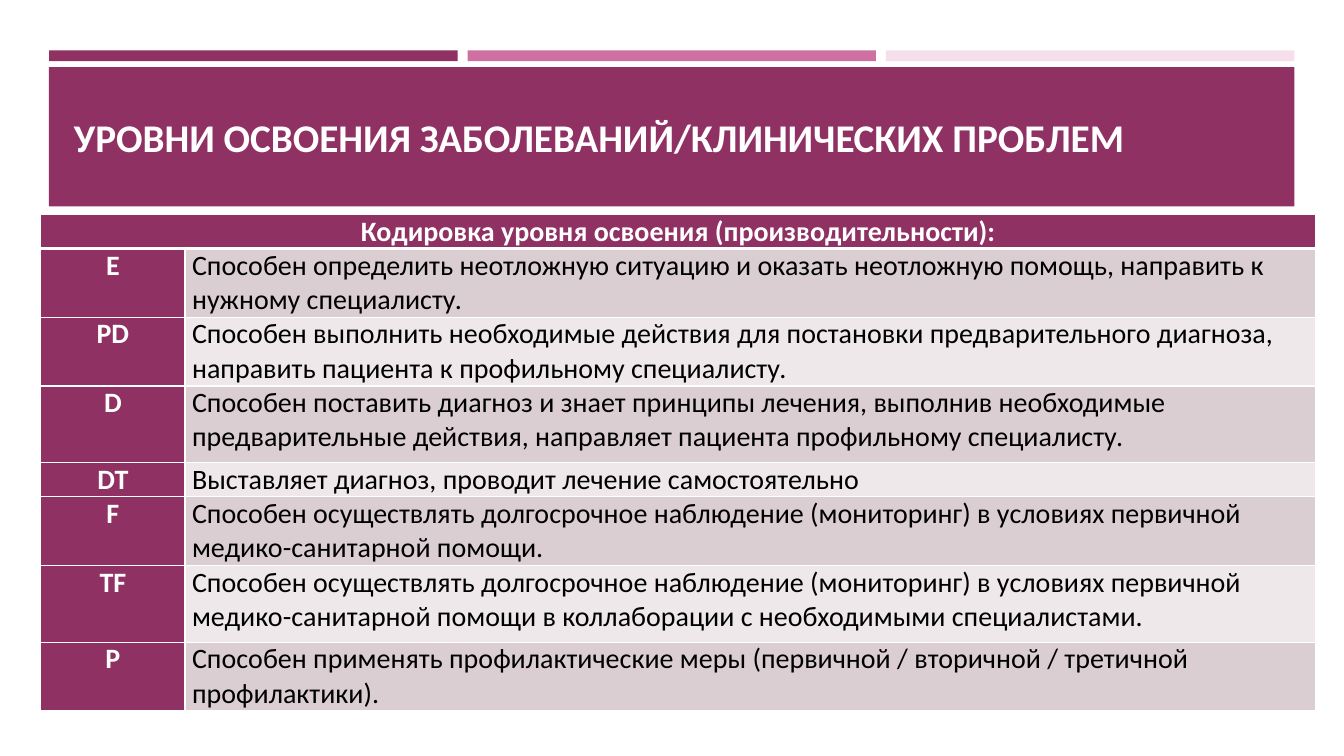
from pptx import Presentation
from pptx.dml.color import RGBColor
from pptx.enum.shapes import MSO_SHAPE
from pptx.enum.text import MSO_ANCHOR, MSO_AUTO_SIZE, PP_ALIGN
from pptx.oxml import parse_xml
from pptx.oxml.ns import nsdecls
from pptx.util import Cm, Pt

PLUM, ROSE, BLUSH = "903163", "CE71A2", "F6DEEB"
WHITE, BLACK = "FFFFFF", "000000"
BANDS = ("DBCED3", "EEE8EA")

TITLE = "УРОВНИ ОСВОЕНИЯ ЗАБОЛЕВАНИЙ/КЛИНИЧЕСКИХ ПРОБЛЕМ"
HEADER = "Кодировка уровня освоения (производительности):"
ONE_LINE, TWO_LINES, TALL = 0.86, 1.73, 1.93
LEVELS = [
    ("E", "Способен определить неотложную ситуацию и оказать неотложную помощь, "
          "направить к нужному специалисту.", TWO_LINES),
    ("PD", "Способен выполнить необходимые действия для постановки предварительного "
           "диагноза, направить пациента к профильному специалисту.", TWO_LINES),
    ("D", "Способен поставить диагноз и знает принципы лечения, выполнив необходимые "
          "предварительные действия, направляет пациента профильному специалисту.", TALL),
    ("DT", "Выставляет диагноз, проводит лечение самостоятельно", ONE_LINE),
    ("F", "Способен осуществлять долгосрочное наблюдение (мониторинг) в условиях "
          "первичной медико-санитарной помощи.", TWO_LINES),
    ("TF", "Способен осуществлять долгосрочное наблюдение (мониторинг) в условиях "
           "первичной медико-санитарной помощи в коллаборации с необходимыми "
           "специалистами.", TALL),
    ("P", "Способен применять профилактические меры (первичной / вторичной / "
          "третичной профилактики).", TWO_LINES),
]


def color(value):
    return RGBColor.from_string(value)


def apply(target, values):
    for name, value in values.items():
        setattr(target, name, value)


def write(frame, text, size, ink, bold, align):
    para = frame.paragraphs[0]
    para.alignment = align
    span = para.add_run()
    span.text = text
    apply(span.font, {"name": "Calibri", "size": Pt(size), "bold": bold})
    span.font.color.rgb = color(ink)


def add_block(page, left, top, width, height, fill):
    block = page.shapes.add_shape(
        MSO_SHAPE.RECTANGLE, Cm(left), Cm(top), Cm(width), Cm(height))
    block.fill.solid()
    block.fill.fore_color.rgb = color(fill)
    block.line.fill.background()
    block.shadow.inherit = False


def add_stripes(page, left, top, width, height, gap):
    fills = (PLUM, ROSE, BLUSH)
    stripe = (width - gap * (len(fills) - 1)) / len(fills)
    for index, fill in enumerate(fills):
        add_block(page, left + index * (stripe + gap), top, stripe, height, fill)


def add_banner(page, left, top, width, height):
    add_block(page, left, top, width, height, PLUM)
    title = page.shapes.title
    page.shapes.element.append(title.element)  # bring in front of the banner
    apply(title, {"left": Cm(left + 0.38), "top": Cm(top + 0.36),
                  "width": Cm(width - 0.76), "height": Cm(2.13)})
    apply(title.text_frame, {"word_wrap": True, "auto_size": MSO_AUTO_SIZE.NONE,
                             "vertical_anchor": MSO_ANCHOR.BOTTOM})
    write(title.text_frame, TITLE, 28, WHITE, True, PP_ALIGN.LEFT)


def format_cell(cell, fill, top_line=1, bottom_line=1):
    apply(cell, {"margin_left": Cm(0.18), "margin_right": Cm(0.18),
                 "margin_top": 0, "margin_bottom": 0,
                 "vertical_anchor": MSO_ANCHOR.TOP})
    properties = cell._tc.get_or_add_tcPr()
    sides = {"lnL": 1, "lnR": 1, "lnT": top_line, "lnB": bottom_line}
    for side, points in sides.items():
        properties.append(parse_xml(
            f'<a:{side} {nsdecls("a")} w="{Pt(points)}"><a:solidFill>'
            f'<a:srgbClr val="{WHITE}"/></a:solidFill></a:{side}>'))
    cell.fill.solid()
    cell.fill.fore_color.rgb = color(fill)


def add_level_table(page, left, top, width, code_width):
    heights = [ONE_LINE] + [height for _, _, height in LEVELS]
    table = page.shapes.add_table(len(heights), 2, Cm(left), Cm(top),
                                  Cm(width), Cm(sum(heights))).table
    apply(table, {"first_row": False, "horz_banding": False})
    table.columns[0].width = Cm(code_width)
    table.columns[1].width = Cm(width - code_width)
    for row, height in zip(table.rows, heights):
        row.height = Cm(height)

    header = table.cell(0, 0)
    header.merge(table.cell(0, 1))
    for cell in table.rows[0].cells:
        format_cell(cell, PLUM, bottom_line=3)
    write(header.text_frame, HEADER, 20, WHITE, True, PP_ALIGN.CENTER)

    for index, (code, meaning, _) in enumerate(LEVELS):
        code_cell, meaning_cell = table.rows[index + 1].cells
        top_line = 3 if index == 0 else 1
        format_cell(code_cell, PLUM, top_line)
        format_cell(meaning_cell, BANDS[index % 2], top_line)
        write(code_cell.text_frame, code, 20, WHITE, True, PP_ALIGN.CENTER)
        write(meaning_cell.text_frame, meaning, 20, BLACK, False, PP_ALIGN.LEFT)


def main():
    deck = Presentation()
    apply(deck, {"slide_width": Cm(33.87), "slide_height": Cm(19.05)})
    page = deck.slides.add_slide(deck.slide_layouts[5])
    add_stripes(page, 1.24, 1.27, 31.38, 0.27, 0.25)
    add_banner(page, 1.23, 1.69, 31.39, 3.51)
    add_level_table(page, 1.03, 5.4, 32.13, 3.63)
    deck.save("out.pptx")


if __name__ == "__main__":
    main()
